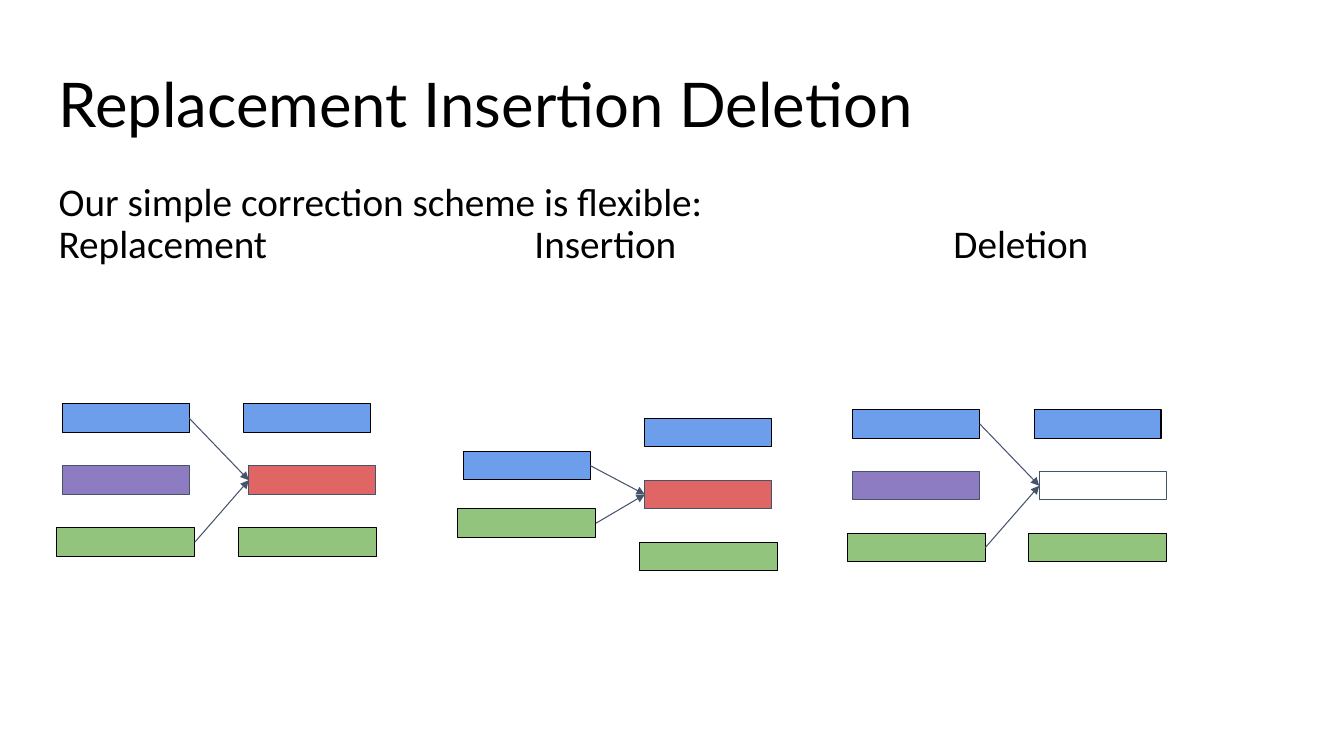
from dataclasses import dataclass

from lxml.etree import SubElement
from pptx import Presentation
from pptx.dml.color import RGBColor
from pptx.enum.shapes import MSO_CONNECTOR, MSO_SHAPE
from pptx.enum.text import MSO_ANCHOR, MSO_AUTO_SIZE, PP_ALIGN
from pptx.oxml.ns import qn
from pptx.shapes.autoshape import Shape
from pptx.slide import Slide
from pptx.util import Cm, Pt

HUES = {
    "black": "000000",
    "slate": "44546A",
    "blue": "6D9EEB",
    "violet": "8E7CC3",
    "red": "E06666",
    "green": "93C47D",
}
HIGH = 0.72  # all lengths in cm
WIDE = 3.2
SHIFT = 4.57  # from the left stack to the right one
STEP = 1.56


@dataclass(frozen=True)
class Block:
    fill: str | None
    line: str
    extra: float = 0  # overhang on each side


@dataclass(frozen=True)
class Panel:
    left: float
    mid: float
    before: tuple[str, ...]
    after: tuple[str, ...]
    step: float = STEP
    nudge: float = 0  # moves the middle block of the right stack


BLOCKS = {
    "first": Block("blue", "black"),
    "old": Block("violet", "slate"),
    "new": Block("red", "slate"),
    "empty": Block(None, "slate"),
    "last": Block("green", "black", 0.14),
}
PANELS = (
    Panel(1.57, 11.74, ("first", "old", "last"), ("first", "new", "last"), nudge=0.13),
    Panel(11.68, 12.1, ("first", "last"), ("first", "new", "last"), step=1.45),
    Panel(21.49, 11.88, ("first", "old", "last"), ("first", "empty", "last"), nudge=0.13),
)


def tint(name: str) -> RGBColor:
    return RGBColor.from_string(HUES[name])


def write(shape: Shape, text: str, *, font: str, size: float,
          anchor: MSO_ANCHOR, tabs: tuple[float, ...] = ()) -> None:
    """Fill a shape with left-aligned lines, with tab stops in cm."""
    frame = shape.text_frame
    frame.word_wrap = True
    frame.auto_size = MSO_AUTO_SIZE.NONE
    frame.vertical_anchor = anchor
    frame.margin_left = frame.margin_right = Cm(0.33)
    frame.margin_top = frame.margin_bottom = Cm(0.33)
    for i, line in enumerate(text.split("\n")):
        para = frame.add_paragraph() if i else frame.paragraphs[0]
        para.alignment = PP_ALIGN.LEFT
        para.line_spacing = 0.9
        para.space_before = para.space_after = Pt(0)
        if tabs:
            stops = SubElement(para._p.get_or_add_pPr(), qn("a:tabLst"))
            for stop in tabs:
                SubElement(stops, qn("a:tab"), pos=str(Cm(stop)), algn="l")
        run = para.add_run()
        run.text = line
        run.font.name = font
        run.font.size = Pt(size)
        run.font.color.rgb = tint("black")


def draw(slide: Slide, block: Block, left: float, top: float) -> Shape:
    box = slide.shapes.add_shape(
        MSO_SHAPE.RECTANGLE, Cm(left - block.extra), Cm(top),
        Cm(WIDE + 2 * block.extra), Cm(HIGH))
    box.shadow.inherit = False
    if block.fill:
        box.fill.solid()
        box.fill.fore_color.rgb = tint(block.fill)
    else:
        box.fill.background()
    box.line.color.rgb = tint(block.line)
    box.line.width = Pt(0.75)
    return box


def stack(slide: Slide, names: tuple[str, ...], left: float, mid: float,
          step: float, nudge: float = 0) -> list[Shape]:
    """Draw blocks in a column centred on the height mid."""
    half = (len(names) - 1) / 2
    return [
        draw(slide, BLOCKS[name], left + (nudge if i == half else 0),
             mid + (i - half) * step)
        for i, name in enumerate(names)
    ]


def link(slide: Slide, start: Shape, end: Shape) -> None:
    """Join the right side of start to the left side of end."""
    arrow = slide.shapes.add_connector(MSO_CONNECTOR.STRAIGHT, 0, 0, 0, 0)
    arrow.begin_connect(start, 3)
    arrow.end_connect(end, 1)
    arrow.line.color.rgb = tint("slate")
    arrow.line.width = Pt(0.75)
    SubElement(arrow.line._get_or_add_ln(), qn("a:tailEnd"), type="triangle")
    SubElement(arrow._element.spPr, qn("a:effectLst"))


def main() -> None:
    deck = Presentation()
    deck.slide_width, deck.slide_height = Cm(33.87), Cm(19.05)
    slide = deck.slides.add_slide(deck.slide_layouts[5])

    title = slide.shapes.title
    title.left, title.top = Cm(1.15), Cm(1.65)
    title.width, title.height = Cm(31.55), Cm(2.12)
    write(title, "Replacement Insertion Deletion",
          font="Lato", size=44, anchor=MSO_ANCHOR.MIDDLE)

    body = slide.shapes.add_textbox(Cm(1.15), Cm(4.27), Cm(31.55), Cm(4.8))
    write(body, "Our simple correction scheme is flexible:\n"
                "Replacement\tInsertion\tDeletion",
          font="Calibri", size=28, anchor=MSO_ANCHOR.TOP, tabs=(11.99, 22.55))

    for panel in PANELS:
        before = stack(slide, panel.before, panel.left, panel.mid, panel.step)
        after = stack(slide, panel.after, panel.left + SHIFT, panel.mid,
                      STEP, panel.nudge)
        for source in (before[0], before[-1]):
            link(slide, source, after[1])

    deck.save("out.pptx")


if __name__ == "__main__":
    main()
